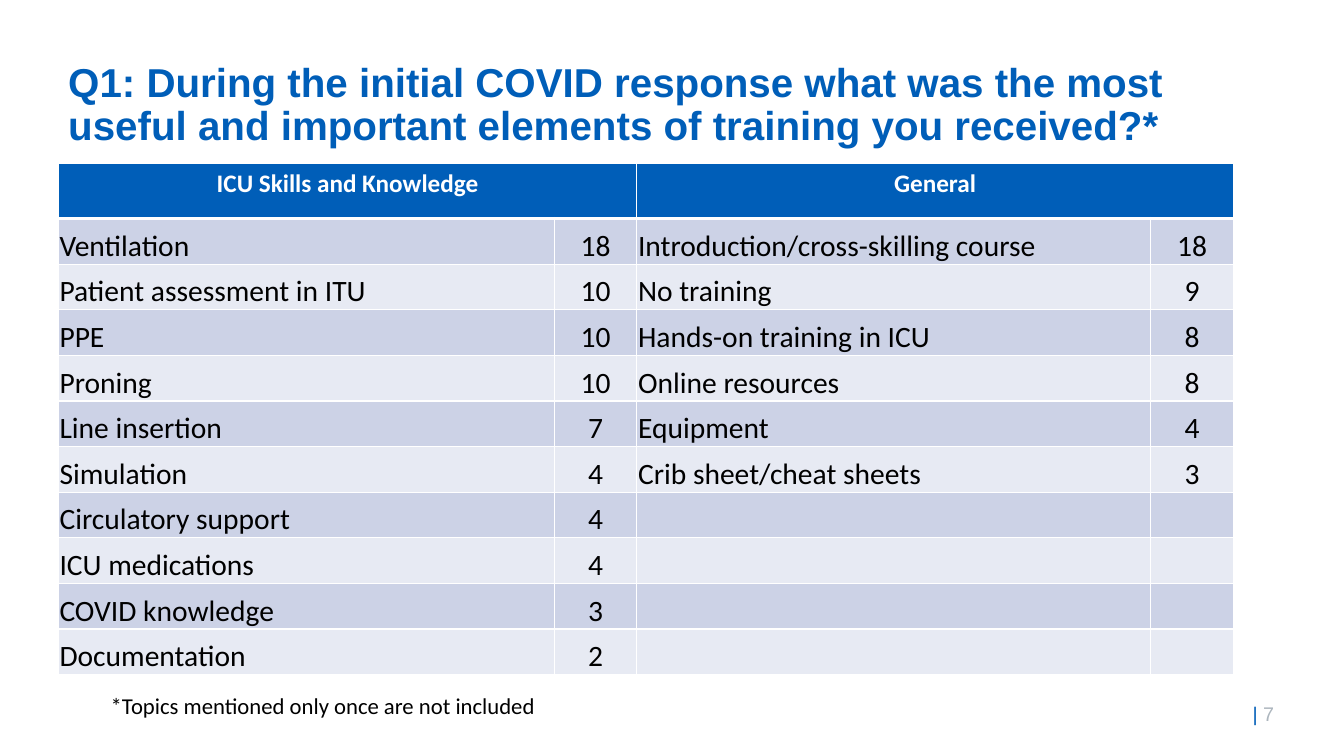
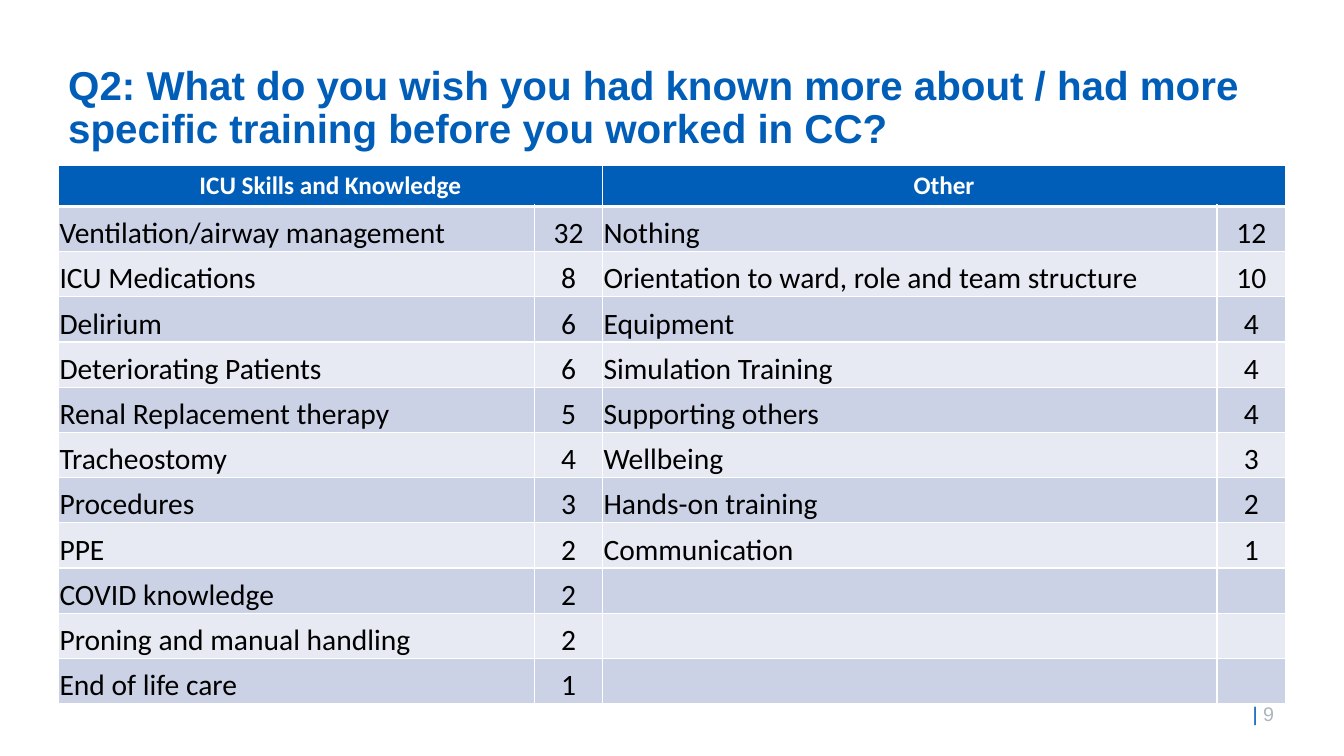
import dataclasses
import itertools

import lxml.etree
import pptx
import pptx.dml.color
import pptx.enum.text
import pptx.oxml.ns
import pptx.util

Cm = pptx.util.Cm
Pt = pptx.util.Pt
Color = pptx.dml.color.RGBColor.from_string
Align = pptx.enum.text.PP_ALIGN
Anchor = pptx.enum.text.MSO_ANCHOR


@dataclasses.dataclass(frozen=True)
class Theme:
    blue: str = "005EB8"
    grey: str = "ADB6BE"
    white: str = "FFFFFF"
    black: str = "000000"
    bands: tuple = ("CCD2E6", "E7EAF3")
    heading_font: str = "Arial"
    body_font: str = "Calibri"
    title_size: float = 28.8
    header_size: float = 18
    body_size: float = 21.1
    note_size: float = 16.2
    number_size: float = 14.1
    border: float = 1
    header_rule: float = 3


THEME = Theme()

FONTS = {
    "title": {"name": THEME.heading_font, "size": Pt(THEME.title_size), "bold": True},
    "header": {"name": THEME.body_font, "size": Pt(THEME.header_size), "bold": True},
    "body": {"name": THEME.body_font, "size": Pt(THEME.body_size), "bold": False},
    "note": {"name": THEME.body_font, "size": Pt(THEME.note_size)},
    "number": {"name": THEME.heading_font, "size": Pt(THEME.number_size)},
}

HEADER_CELL = {"vertical_anchor": Anchor.TOP}
BODY_CELL = {
    "vertical_anchor": Anchor.BOTTOM,
    "margin_left": Cm(0.03),
    "margin_right": Cm(0.03),
    "margin_top": Cm(0.03),
    "margin_bottom": Cm(0),
}

SLIDES = [
    {
        "title": "Q1: During the initial COVID response what was the most useful and important elements of training you received?*",
        "title_box": (1.47, 1.45, 30.91, 3.48),
        "number": "7",
        "note": "*Topics mentioned only once are not included",
        "table_box": (1.47, 4.11),
        "columns": (12.5, 2.08, 12.95, 2.08),
        "header_height": 1.4,
        "row_height": 1.15,
        "groups": {
            "ICU Skills and Knowledge": [
                ("Ventilation", 18),
                ("Patient assessment in ITU", 10),
                ("PPE", 10),
                ("Proning", 10),
                ("Line insertion", 7),
                ("Simulation", 4),
                ("Circulatory support", 4),
                ("ICU medications", 4),
                ("COVID knowledge", 3),
                ("Documentation", 2),
            ],
            "General": [
                ("Introduction/cross-skilling course", 18),
                ("No training", 9),
                ("Hands-on training in ICU", 8),
                ("Online resources", 8),
                ("Equipment", 4),
                ("Crib sheet/cheat sheets", 3),
            ],
        },
    },
    {
        "title": "Q2: What do you wish you had known more about / had more specific training before you worked in CC?",
        "title_box": (1.47, 1.52, 30.94, 1.7),
        "number": "9",
        "note": None,
        "table_box": (1.47, 4.17),
        "columns": (12.01, 1.7, 15.49, 1.73),
        "header_height": 1.03,
        "row_height": 1.14,
        "groups": {
            "ICU Skills and Knowledge": [
                ("Ventilation/airway management", 32),
                ("ICU Medications", 8),
                ("Delirium", 6),
                ("Deteriorating Patients", 6),
                ("Renal Replacement therapy", 5),
                ("Tracheostomy", 4),
                ("Procedures", 3),
                ("PPE", 2),
                ("COVID knowledge", 2),
                ("Proning and manual handling", 2),
                ("End of life care", 1),
            ],
            "Other": [
                ("Nothing", 12),
                ("Orientation to ward, role and team structure", 10),
                ("Equipment", 4),
                ("Simulation Training", 4),
                ("Supporting others", 4),
                ("Wellbeing", 3),
                ("Hands-on training", 2),
                ("Communication", 1),
            ],
        },
    },
]


def apply_values(target, values):
    for name, value in values.items():
        setattr(target, name, value)


def add_run(paragraph, text, style, color):
    run = paragraph.add_run()
    run.text = text
    apply_values(run.font, FONTS[style])
    run.font.color.rgb = Color(color)


def add_text(slide, box, runs, style, wrap=True, spacing=None):
    shape = slide.shapes.add_textbox(*map(Cm, box))
    frame = shape.text_frame
    apply_values(frame, {"word_wrap": wrap, "vertical_anchor": Anchor.TOP})
    paragraph = frame.paragraphs[0]
    paragraph.line_spacing = spacing
    for text, color in runs:
        add_run(paragraph, text, style, color)


def set_borders(cell, widths):
    properties = cell._tc.get_or_add_tcPr()
    for side, width in widths.items():
        line = lxml.etree.SubElement(
            properties, pptx.oxml.ns.qn("a:ln" + side), w=str(Pt(width))
        )
        fill = lxml.etree.SubElement(line, pptx.oxml.ns.qn("a:solidFill"))
        lxml.etree.SubElement(fill, pptx.oxml.ns.qn("a:srgbClr"), val=THEME.white)


def fill_cell(cell, text, style, values, text_color, fill_color, alignment, borders):
    set_borders(cell, borders)
    cell.fill.solid()
    cell.fill.fore_color.rgb = Color(fill_color)
    apply_values(cell, values)
    paragraph = cell.text_frame.paragraphs[0]
    paragraph.alignment = alignment
    if text:
        add_run(paragraph, text, style, text_color)


def add_topic_table(slide, content):
    groups = content["groups"]
    rows = list(itertools.zip_longest(*groups.values(), fillvalue=("", "")))
    heights = [content["header_height"]] + [content["row_height"]] * len(rows)
    columns = content["columns"]
    frame = slide.shapes.add_table(
        len(heights), len(columns), *map(Cm, content["table_box"]),
        Cm(sum(columns)), Cm(sum(heights)),
    )
    table = frame.table
    apply_values(table, {"first_row": False, "horz_banding": False})
    for column, width in zip(table.columns, columns):
        column.width = Cm(width)
    for row, height in zip(table.rows, heights):
        row.height = Cm(height)

    borders = dict.fromkeys("LRTB", THEME.border)
    header_borders = {**borders, "B": THEME.header_rule}
    first_body_borders = {**borders, "T": THEME.header_rule}
    headings = itertools.chain.from_iterable((name, "") for name in groups)
    for index, heading in enumerate(headings):
        fill_cell(table.cell(0, index), heading, "header", HEADER_CELL,
                  THEME.white, THEME.blue, Align.CENTER, header_borders)
    for index in range(0, len(columns), 2):
        table.cell(0, index).merge(table.cell(0, index + 1))

    for number, pairs in enumerate(rows):
        edges = borders if number else first_body_borders
        for index, value in enumerate(itertools.chain.from_iterable(pairs)):
            alignment = Align.CENTER if index % 2 else Align.LEFT
            fill_cell(table.cell(number + 1, index), str(value), "body", BODY_CELL,
                      THEME.black, THEME.bands[number % 2], alignment, edges)


def add_page_number(slide, number):
    runs = [("| ", THEME.blue), (number, THEME.grey)]
    add_text(slide, (31.32, 17.55, 2.39, 0.86), runs, "number")


def add_topic_slide(presentation, content):
    slide = presentation.slides.add_slide(presentation.slide_layouts[6])
    add_page_number(slide, content["number"])
    add_text(slide, content["title_box"], [(content["title"], THEME.blue)],
             "title", spacing=0.9)
    add_topic_table(slide, content)
    if content["note"]:
        add_text(slide, (2.54, 17.3, 11.48, 0.94), [(content["note"], THEME.black)],
                 "note", wrap=False)


def main():
    presentation = pptx.Presentation()
    apply_values(presentation, {"slide_width": Cm(33.87), "slide_height": Cm(19.05)})
    for content in SLIDES:
        add_topic_slide(presentation, content)
    presentation.save("out.pptx")


if __name__ == "__main__":
    main()
